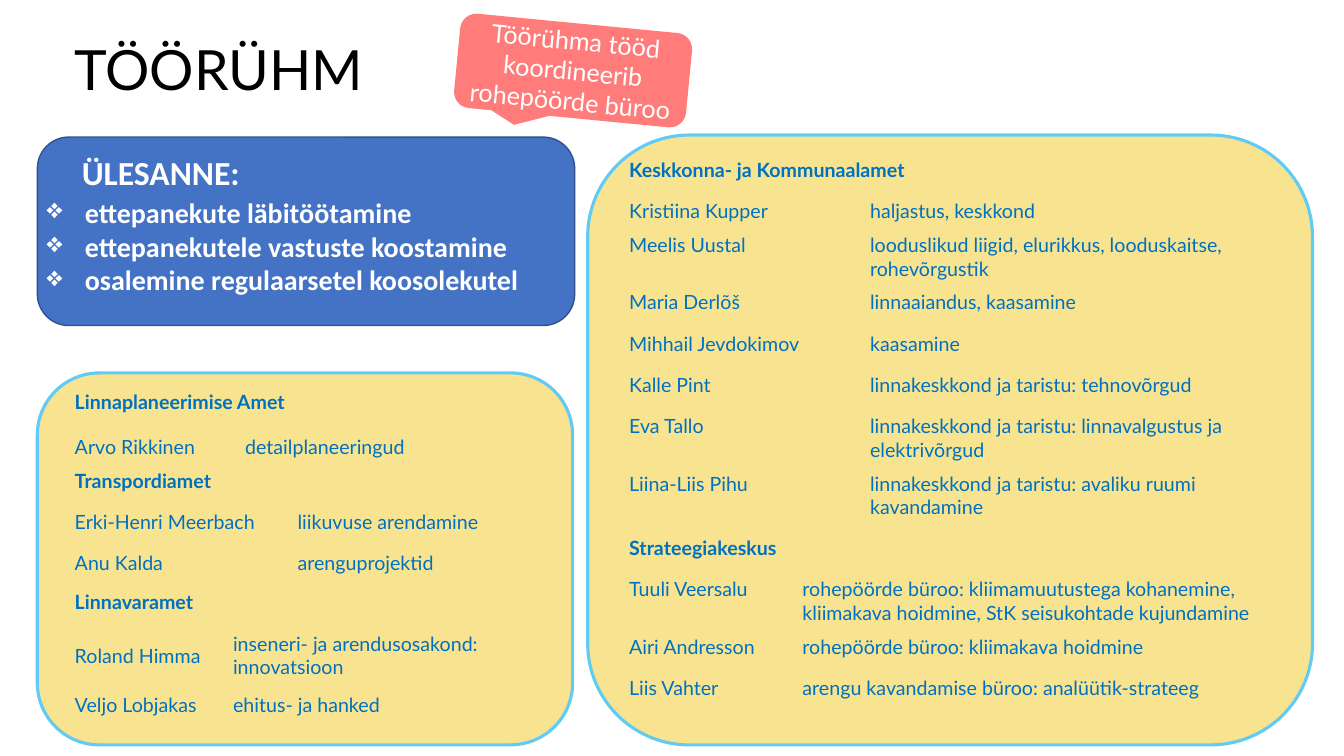
"""Build the working group slide: task, coordinator callout and member lists."""
from lxml import etree
from pptx import Presentation
from pptx.dml.color import RGBColor
from pptx.enum.shapes import MSO_SHAPE
from pptx.enum.text import MSO_ANCHOR, PP_ALIGN
from pptx.oxml.ns import qn
from pptx.util import Inches, Pt

ROUNDED = MSO_SHAPE.ROUNDED_RECTANGLE
CALLOUT = MSO_SHAPE.ROUNDED_RECTANGULAR_CALLOUT
TOP, MIDDLE = MSO_ANCHOR.TOP, MSO_ANCHOR.MIDDLE
CENTER, LEFT = PP_ALIGN.CENTER, PP_ALIGN.LEFT
WIDTH, HEIGHT = Inches(13.33), Inches(7.5)
PLAIN_TABLE = "{2D5ABB26-0587-4C30-8999-92F81FD0307C}"
ROW = 5.47

TITLE_BOX = (4.8, 5.33, 31.65, 8.67)
CALLOUT_BOX = (33.98, 3.07, 17.33, 12.53)
TASK_BOX = (2.78, 18.13, 39.98, 24.93)
LEFT_PANEL = (2.78, 49.33, 39.83, 49.2)
RIGHT_PANEL = (43.73, 17.87, 53.93, 80.67)

TASKS = ["ettepanekute läbitöötamine", "ettepanekutele vastuste koostamine",
         "osalemine regulaarsetel koosolekutel"]
LEFT_TEAMS = [
    dict(name="Linnaplaneerimise Amet", drop=1.6, columns=(12.68, 19.95), anchor=MIDDLE,
         members=[("Arvo Rikkinen", "detailplaneeringud")]),
    dict(name="Transpordiamet", drop=12, columns=(16.58, 18.53), anchor=TOP,
         members=[("Erki-Henri Meerbach", "liikuvuse arendamine"),
                  ("Anu Kalda", "arenguprojektid")]),
    dict(name="Linnavaramet", drop=28.13, columns=(11.78, 24.23), anchor=MIDDLE,
         members=[("Roland Himma", "inseneri- ja arendusosakond: innovatsioon"),
                  ("Veljo Lobjakas", "ehitus- ja hanked")]),
]
RIGHT_TEAMS = [
    dict(name="Keskkonna- ja Kommunaalamet", drop=2.4, columns=(17.93, 32.4), anchor=TOP,
         first_row=3.33,
         members=[("Kristiina Kupper", "haljastus, keskkond"),
                  ("Meelis Uustal",
                   "looduslikud liigid, elurikkus, looduskaitse, rohevõrgustik"),
                  ("Maria Derlõš", "linnaaiandus, kaasamine"),
                  ("Mihhail Jevdokimov", "kaasamine"),
                  ("Kalle Pint", "linnakeskkond ja taristu: tehnovõrgud"),
                  ("Eva Tallo", "linnakeskkond ja taristu: linnavalgustus ja elektrivõrgud"),
                  ("Liina-Liis Pihu", "linnakeskkond ja taristu: avaliku ruumi kavandamine")]),
    dict(name="Strateegiakeskus", drop=52.4, columns=(12.9, 37.43), anchor=TOP,
         members=[("Tuuli Veersalu", "rohepöörde büroo: kliimamuutustega kohanemine, "
                   "kliimakava hoidmine, StK seisukohtade kujundamine"),
                  ("Airi Andresson", "rohepöörde büroo: kliimakava hoidmine"),
                  ("Liis Vahter", "arengu kavandamise büroo: analüütik-strateeg")]),
]


def across(share):
    """Turn a percentage of the slide width into a length."""
    return round(WIDTH * share / 100)


def down(share):
    """Turn a percentage of the slide height into a length."""
    return round(HEIGHT * share / 100)


def place(box):
    """Turn a box of percentages into left, top, width and height."""
    left, top, width, height = box
    return across(left), down(top), across(width), down(height)


def color(value):
    """Turn a hex string into a colour."""
    return RGBColor.from_string(value)


def assign(target, values):
    """Set every attribute named in a dict of format values."""
    for name, value in values.items():
        setattr(target, name, value)


def write(para, words, size, ink, font="Lato", bold=False, **layout):
    """Add one formatted span of text to a paragraph."""
    span = para.add_run()
    span.text = words
    assign(span.font, dict(name=font, size=Pt(size), bold=bold))
    span.font.color.rgb = color(ink)
    assign(para, layout)


def indent(para, margin, first, bullet=None):
    """Set the indents of a paragraph and its bullet, if any."""
    properties = para._p.get_or_add_pPr()
    properties.set("marL", str(Inches(margin)))
    properties.set("indent", str(Inches(first)))
    if bullet:
        etree.SubElement(properties, qn("a:buChar")).set("char", bullet)


def add_panel(page, kind, box, fill, line=None, weight=0):
    """Add a filled shape with an optional outline."""
    shape = page.shapes.add_shape(kind, *place(box))
    shape.shadow.inherit = False
    shape.fill.solid()
    shape.fill.fore_color.rgb = color(fill)
    if line:
        shape.line.color.rgb = color(line)
        shape.line.width = Pt(weight)
    else:
        shape.line.fill.background()
    return shape


def add_title(page, box):
    """Place the slide title."""
    frame = page.shapes.add_textbox(*place(box)).text_frame
    assign(frame, dict(word_wrap=True, vertical_anchor=MIDDLE))
    write(frame.paragraphs[0], "TÖÖRÜHM", 39.6, "000000", line_spacing=0.9)


def add_callout(page, box):
    """Place the tilted callout that names the coordinator."""
    shape = add_panel(page, CALLOUT, box, "FF7C7A")
    shape.rotation = 5.5
    for index, value in enumerate((-0.23, 0.63, 0.17)):
        shape.adjustments[index] = value
    frame = shape.text_frame
    assign(frame, dict(word_wrap=True, vertical_anchor=MIDDLE,
                       margin_left=Inches(0.05), margin_right=Inches(0.05)))
    write(frame.paragraphs[0], "Töörühma tööd koordineerib rohepöörde büroo", 18,
          "FFFFFF", alignment=CENTER)


def add_task(page, box):
    """Place the blue box with the list of tasks."""
    frame = add_panel(page, ROUNDED, box, "4472C4", "2F528F", 1).text_frame
    assign(frame, dict(word_wrap=True, vertical_anchor=TOP, margin_left=0,
                       margin_right=0, margin_top=Inches(0.06), margin_bottom=0))
    heading = frame.paragraphs[0]
    write(heading, "ÜLESANNE:", 24, "FFFFFF", "Calibri", True,
          alignment=LEFT, space_after=Pt(2))
    indent(heading, 0.35, 0)
    for task in TASKS:
        para = frame.add_paragraph()
        write(para, task, 20, "FFFFFF", "Calibri", True, alignment=LEFT)
        indent(para, 0.38, -0.38, "❖")


def add_team(page, left, top, team):
    """Place a table with a team's name and its members."""
    rows = [(team["name"],)] + team["members"]
    box = (left, top, sum(team["columns"]), ROW * len(rows))
    table = page.shapes.add_table(len(rows), 2, *place(box)).table
    assign(table, dict(first_row=False, horz_banding=False))
    table._tbl.tblPr.find(qn("a:tableStyleId")).text = PLAIN_TABLE
    for column, share in zip(table.columns, team["columns"]):
        column.width = across(share)
    for row in table.rows:
        row.height = down(ROW)
    table.rows[1].height = down(team.get("first_row", ROW))
    table.cell(0, 0).merge(table.cell(0, 1))
    for row_index, texts in enumerate(rows):
        for column_index, words in enumerate(texts):
            cell = table.cell(row_index, column_index)
            cell.fill.background()
            cell.vertical_anchor = team["anchor"] if row_index else TOP
            write(cell.text_frame.paragraphs[0], words, 14, "0070C0", bold=row_index == 0)


def add_teams(page, box, teams, inset):
    """Place a yellow panel with its team tables inside."""
    add_panel(page, ROUNDED, box, "F8E490", "61CBF4", 2.25)
    for team in teams:
        add_team(page, box[0] + inset, box[1] + team["drop"], team)


def main():
    """Build the deck and save it."""
    deck = Presentation()
    assign(deck, dict(slide_width=WIDTH, slide_height=HEIGHT))
    page = deck.slides.add_slide(deck.slide_layouts[6])
    add_teams(page, LEFT_PANEL, LEFT_TEAMS, 2.03)
    add_teams(page, RIGHT_PANEL, RIGHT_TEAMS, 2.33)
    add_title(page, TITLE_BOX)
    add_callout(page, CALLOUT_BOX)
    add_task(page, TASK_BOX)
    deck.save("out.pptx")


if __name__ == "__main__":
    main()
